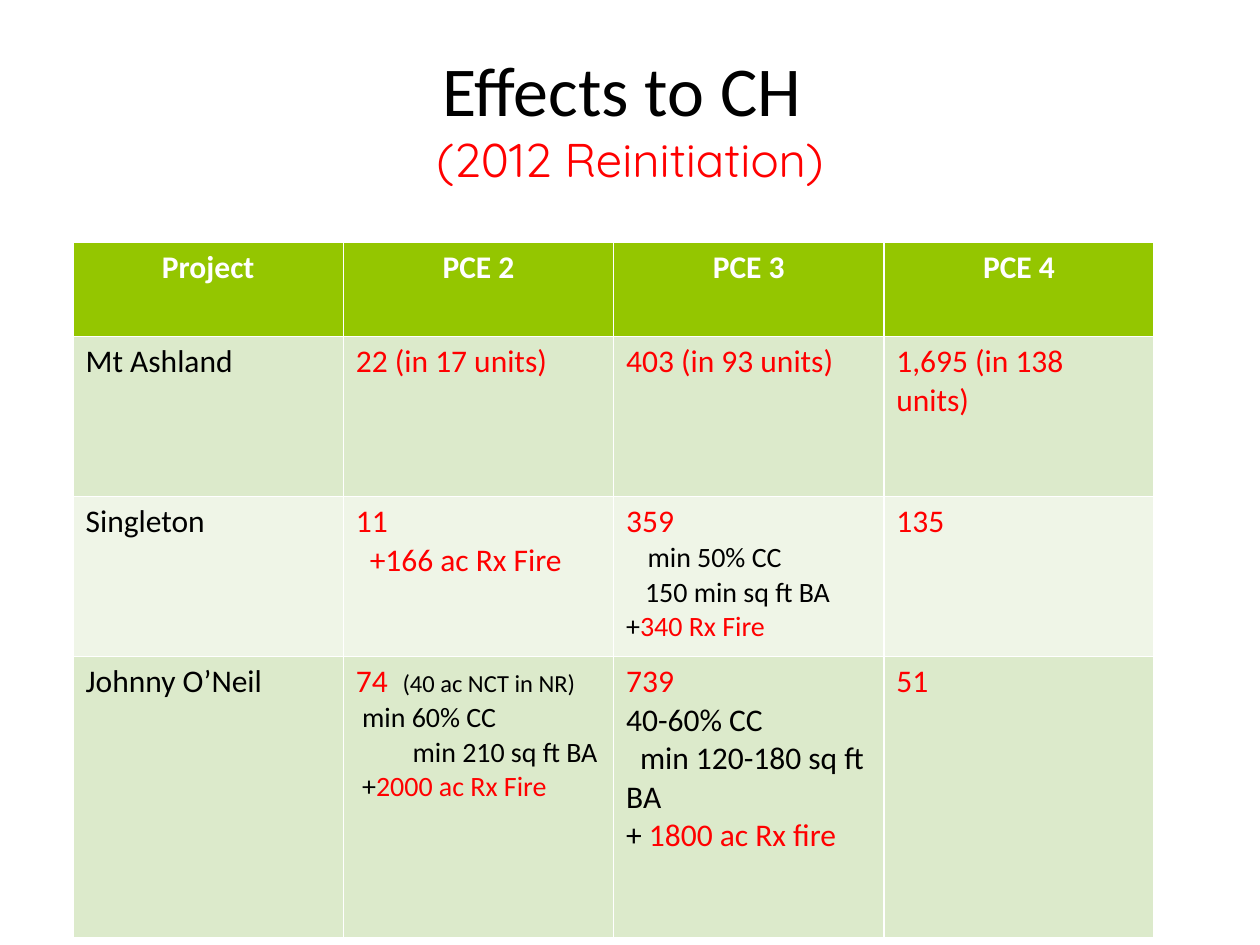
from typing import NamedTuple

from lxml import etree
from pptx import Presentation
from pptx.dml.color import RGBColor
from pptx.enum.text import MSO_ANCHOR, PP_ALIGN
from pptx.oxml.ns import qn
from pptx.util import Inches, Pt

CENTER, LEFT = PP_ALIGN.CENTER, PP_ALIGN.LEFT
MIDDLE = MSO_ANCHOR.MIDDLE
RED, BLACK, WHITE = "FF0000", "000000", "FFFFFF"
GREEN, BANDS = "94C600", ("DCEACB", "EFF5E7")
COL = 2.145
ROWS = (0.75, 1.27, 1.27, 2.23)


class Run(NamedTuple):
    text: str
    color: str = RED
    size: float = 18


class Line(NamedTuple):
    runs: tuple[Run, ...]
    indent: float = 0
    tab: float = 0


def rgb(code: str) -> RGBColor:
    return RGBColor.from_string(code)


def put(par, text: str, *, size: float = 18, color: str = BLACK,
        font: str = "Calibri", bold: bool = False) -> None:
    """Append one formatted run to a paragraph."""
    run = par.add_run()
    run.text = text
    run.font.size = Pt(size)
    run.font.name = font
    run.font.bold = bold
    run.font.color.rgb = rgb(color)


def one(text: str, color: str = RED, size: float = 18,
        indent: float = 0) -> Line:
    """Make a line that holds a single run."""
    return Line((Run(text, color, size),), indent)


def fire(text: str, plus: str = "+", size: float = 16,
         indent: float = 0) -> Line:
    """Make a line with a black plus sign before red text."""
    return Line((Run(plus, BLACK, size), Run(text, RED, size)), indent)


def fill_cell(cell, lines: tuple[Line, ...], back: str, *,
              align=LEFT, bold: bool = False) -> None:
    cell.fill.solid()
    cell.fill.fore_color.rgb = rgb(back)
    frame = cell.text_frame
    for i, line in enumerate(lines):
        par = frame.add_paragraph() if i else frame.paragraphs[0]
        par.alignment = align
        props = par._p.get_or_add_pPr()
        if line.indent:
            props.set("marL", "0")
            props.set("indent", str(Inches(line.indent)))
        if line.tab:
            tabs = etree.SubElement(props, qn("a:tabLst"))
            etree.SubElement(tabs, qn("a:tab"),
                             pos=str(Inches(line.tab)), algn="l")
        for run in line.runs:
            put(par, run.text, size=run.size, color=run.color, bold=bold)


HEADS = ("Project", "PCE 2", "PCE 3", "PCE 4")
BODY = (
    (
        (one("Mt Ashland", BLACK),),
        (one("22 (in 17 units)"),),
        (one("403 (in 93 units)"),),
        (one("1,695 (in 138 units)"),),
    ),
    (
        (one("Singleton", BLACK),),
        (one("11"), one("+166 ac Rx Fire", indent=0.11)),
        (
            one("359"),
            one("min 50% CC", BLACK, 16, 0.17),
            one("150 min sq ft BA", BLACK, 16, 0.15),
            fire("340 Rx Fire"),
        ),
        (one("135"),),
    ),
    (
        (one("Johnny O’Neil", BLACK),),
        (
            Line((Run("74\t"), Run("(40 ac NCT in NR)", BLACK, 14)), tab=0.37),
            one("min 60% CC", BLACK, 16, 0.05),
            one("min 210 sq ft BA", BLACK, 16, 0.45),
            fire("2000 ac Rx Fire", indent=0.05),
        ),
        (
            one("739"),
            one("40-60% CC", BLACK),
            one("min 120-180 sq ft BA", BLACK, indent=0.11),
            fire("1800 ac Rx fire", "+ ", 18),
        ),
        (one("51"),),
    ),
)


def add_title(slide) -> None:
    title = slide.shapes.title
    title.left, title.top = Inches(0.5), Inches(0.3)
    title.width, title.height = Inches(9), Inches(1.25)
    title.text_frame.vertical_anchor = MIDDLE
    par = title.text_frame.paragraphs[0]
    par.alignment = CENTER
    put(par, "Effects to CH ", size=40)
    par.add_line_break()
    put(par, "(2012 Reinitiation)", size=27, color=RED, font="Quicksand")


def add_grid(slide) -> None:
    table = slide.shapes.add_table(
        len(ROWS), len(HEADS), Inches(0.58), Inches(1.92),
        Inches(COL * len(HEADS)), Inches(sum(ROWS))).table
    for col in table.columns:
        col.width = Inches(COL)
    for row, high in zip(table.rows, ROWS):
        row.height = Inches(high)
    for c, head in enumerate(HEADS):
        fill_cell(table.cell(0, c), (one(head, WHITE),), GREEN,
                  align=CENTER, bold=True)
    for r, cells in enumerate(BODY):
        for c, lines in enumerate(cells):
            fill_cell(table.cell(r + 1, c), lines, BANDS[r % 2])


def main() -> None:
    deck = Presentation()
    deck.slide_width, deck.slide_height = Inches(10), Inches(7.5)
    slide = deck.slides.add_slide(deck.slide_layouts[5])
    add_title(slide)
    add_grid(slide)
    deck.save("out.pptx")


if __name__ == "__main__":
    main()
